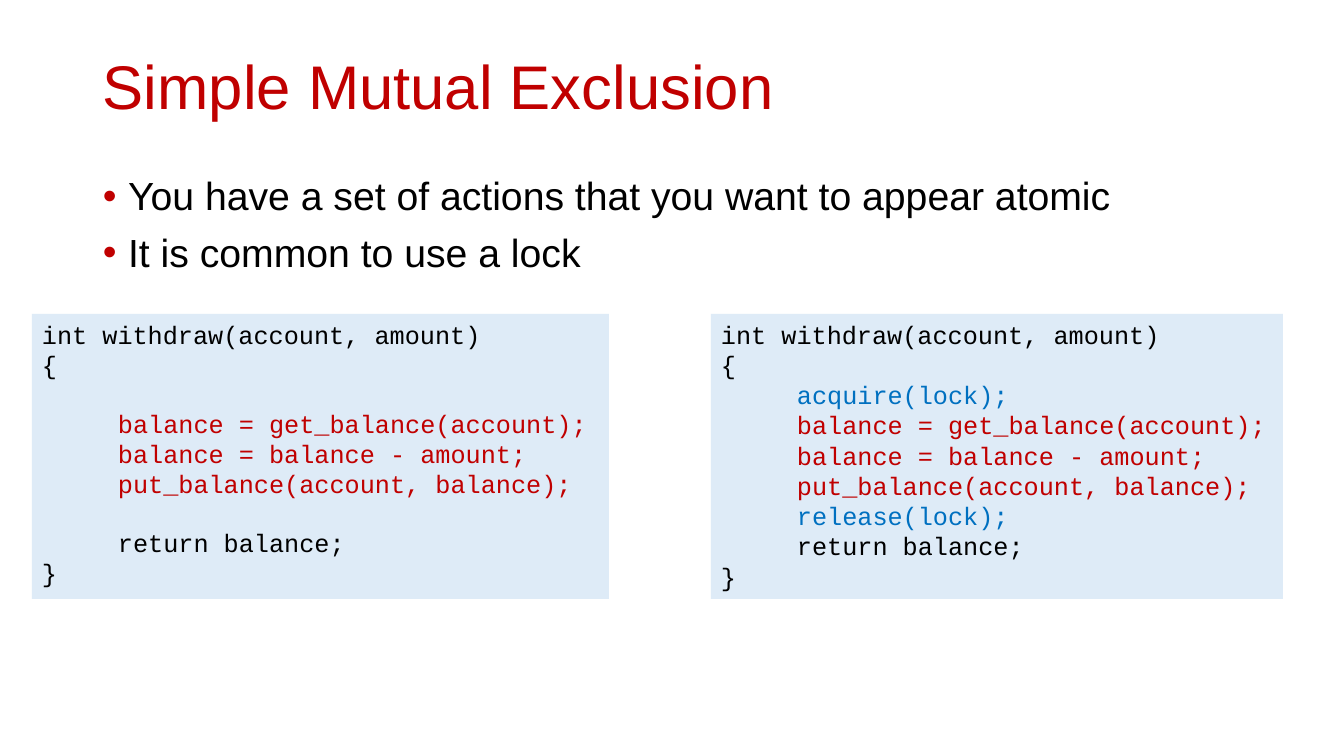
from lxml import etree
from pptx import Presentation
from pptx import util as u
from pptx.dml.color import RGBColor
from pptx.enum import shapes, text
from pptx.oxml.ns import qn

RED, BLUE, BLACK, PANEL = "C00000", "0070C0", "000000", "DEEBF7"


def px(length):
    return u.Emu(round(length * 914400 / 100.8))


def rgb(value):
    return RGBColor.from_string(value)


class SlideBuilder:
    prose_font = "Arial"
    code_font = "Courier New"
    code_size = 18
    code_indent = 76
    blank_line = 20.4

    def __init__(self, slide):
        self.slide = slide

    def style(self, paragraph, font, size, color):
        for run in paragraph.runs:
            run.font.name = font
            run.font.size = u.Pt(size)
            run.font.color.rgb = rgb(color)

    def text_frame(self, left, top, width, height, wording):
        box = self.slide.shapes.add_textbox(*map(px, (left, top, width, height)))
        frame = box.text_frame
        frame.word_wrap = True
        frame.text = wording
        return frame

    def title(self, wording, *place):
        frame = self.text_frame(*place, wording)
        frame.vertical_anchor = text.MSO_ANCHOR.MIDDLE
        heading = frame.paragraphs[0]
        heading.line_spacing = 0.9
        self.style(heading, self.prose_font, 44, RED)

    def bullets(self, points, *place):
        for point in self.text_frame(*place, "\n".join(points)).paragraphs:
            point.line_spacing = 0.9
            point.space_before = u.Pt(10)
            self.style(point, self.prose_font, 28, BLACK)
            properties = point._p.get_or_add_pPr()
            properties.set("marL", str(u.Inches(0.25)))
            properties.set("indent", str(-u.Inches(0.25)))
            bullet_color = etree.SubElement(properties, qn("a:buClr"))
            etree.SubElement(bullet_color, qn("a:srgbClr"), val=RED)
            etree.SubElement(properties, qn("a:buFont"), typeface=self.prose_font)
            etree.SubElement(properties, qn("a:buChar"), char="•")

    def code(self, lines, *place):
        panel = self.slide.shapes.add_shape(
            shapes.MSO_SHAPE.RECTANGLE, *map(px, place))
        panel.shadow.inherit = False
        panel.fill.solid()
        panel.fill.fore_color.rgb = rgb(PANEL)
        panel.line.fill.background()
        frame = panel.text_frame
        frame.word_wrap = True
        frame.vertical_anchor = text.MSO_ANCHOR.TOP
        frame.text = "\n".join(wording for wording, *_ in lines)
        for statement, (_, color, level, gap) in zip(frame.paragraphs, lines):
            statement.alignment = text.PP_ALIGN.LEFT
            statement.space_before = u.Pt(gap * self.blank_line)
            properties = statement._p.get_or_add_pPr()
            properties.set("marL", str(px(level * self.code_indent)))
            properties.set("indent", "0")
            self.style(statement, self.code_font, self.code_size, color)


def withdraw(locked):
    gap = 0 if locked else 1
    acquire = [("acquire(lock);", BLUE, 1, 0)] if locked else []
    release = [("release(lock);", BLUE, 1, 0)] if locked else []
    return [
        ("int withdraw(account, amount)", BLACK, 0, 0),
        ("{", BLACK, 0, 0),
        *acquire,
        ("balance = get_balance(account);", RED, 1, gap),
        ("balance = balance - amount;", RED, 1, 0),
        ("put_balance(account, balance);", RED, 1, 0),
        *release,
        ("return balance;", BLACK, 1, gap),
        ("}", BLACK, 0, 0),
    ]


def main():
    deck = Presentation()
    deck.slide_width, deck.slide_height = px(1344), px(756)
    builder = SlideBuilder(deck.slides.add_slide(deck.slide_layouts[6]))
    builder.title("Simple Mutual Exclusion", 93, 17, 1159, 146)
    builder.bullets(
        ["You have a set of actions that you want to appear atomic",
         "It is common to use a lock"],
        93, 172, 1159, 124)
    for locked, left, width in ((False, 32, 577), (True, 711, 572)):
        builder.code(withdraw(locked), left, 314, width, 285)
    deck.save("out.pptx")


if __name__ == "__main__":
    main()
